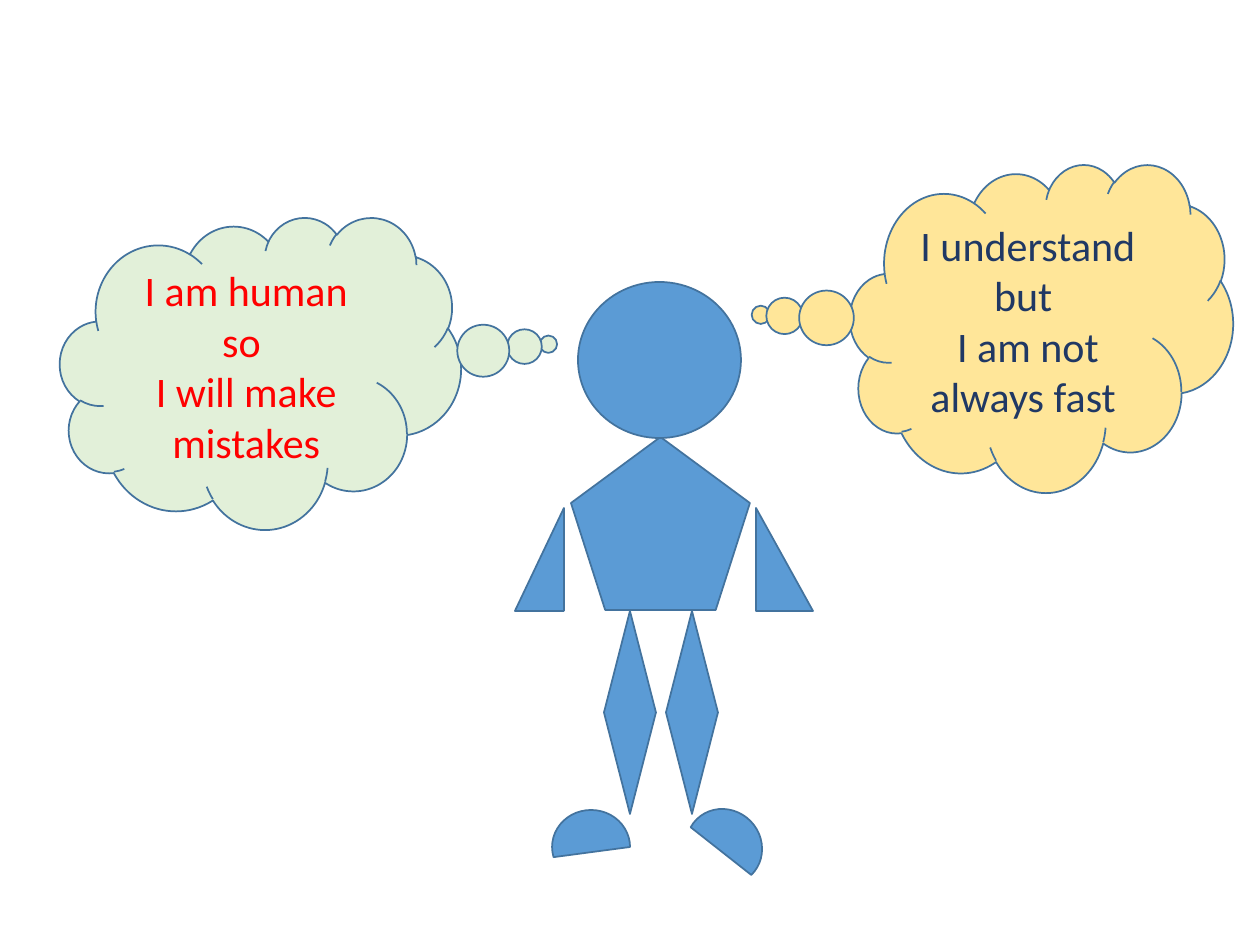
"""Build a slide of a figure with two thought clouds."""
from pptx import Presentation
from pptx.dml.color import RGBColor
from pptx.enum.shapes import MSO_SHAPE as Kind
from pptx.enum.text import MSO_ANCHOR as Anchor, PP_ALIGN as Align
from pptx.util import Emu, Pt

SCALE = 914400 / 126
BLUE, EDGE = "5B9BD5", "43739E"
CHORD = (44.872, 162)


def draw(shapes, kind, box, fill, adj=(), turn=0, flip=False):
    shape = shapes.add_shape(kind, *(Emu(round(n * SCALE)) for n in box))
    shape.shadow.inherit = False
    shape.fill.solid()
    shape.fill.fore_color.rgb = RGBColor.from_string(fill)
    shape.line.color.rgb = RGBColor.from_string(EDGE)
    shape.line.width = Pt(1)
    for i, val in enumerate(adj):
        shape.adjustments[i] = val
    shape.rotation = turn
    if flip:
        shape._element.spPr.xfrm.set("flipH", "1")
    return shape


def write(shape, text, size=24, font="Calibri", color="000000"):
    frame = shape.text_frame
    frame.word_wrap = True
    frame.vertical_anchor = Anchor.MIDDLE
    frame.text = text
    for para in frame.paragraphs:
        para.alignment = Align.CENTER
        for run in para.runs:
            run.font.size = Pt(size)
            run.font.name = font
            run.font.color.rgb = RGBColor.from_string(color)


deck = Presentation()
deck.slide_width = Emu(round(1260 * SCALE))
deck.slide_height = Emu(round(945 * SCALE))
slide = deck.slides.add_slide(deck.slide_layouts[6])

body = slide.shapes.add_group_shape().shapes
draw(body, Kind.REGULAR_PENTAGON, (571, 437, 179, 173), BLUE)
draw(body, Kind.OVAL, (578, 282, 163, 156), BLUE)
draw(body, Kind.RIGHT_TRIANGLE, (756, 508, 57, 103), BLUE)
draw(body, Kind.RIGHT_TRIANGLE, (515, 508, 49, 103), BLUE, flip=True)
for left in (604, 666):
    draw(body, Kind.DIAMOND, (left, 611, 52, 203), BLUE)
for left, turn in ((554, 90), (687, 135.8)):
    draw(body, Kind.CHORD, (left, 808, 74, 78), BLUE, CHORD, turn)

clouds = (
    ((850, 164, 383, 328), "FFE699", (-0.733, -0.04), "203864",
     "I understand but \vI am not always fast "),
    ((60, 217, 401, 312), "E2F0D9", (0.718, -0.092), "FF0000",
     "I am human\vso \nI will make mistakes"),
)
for box, fill, tail, ink, text in clouds:
    cloud = draw(slide.shapes, Kind.CLOUD_CALLOUT, box, fill, tail)
    write(cloud, text, color=ink)

deck.save("out.pptx")
